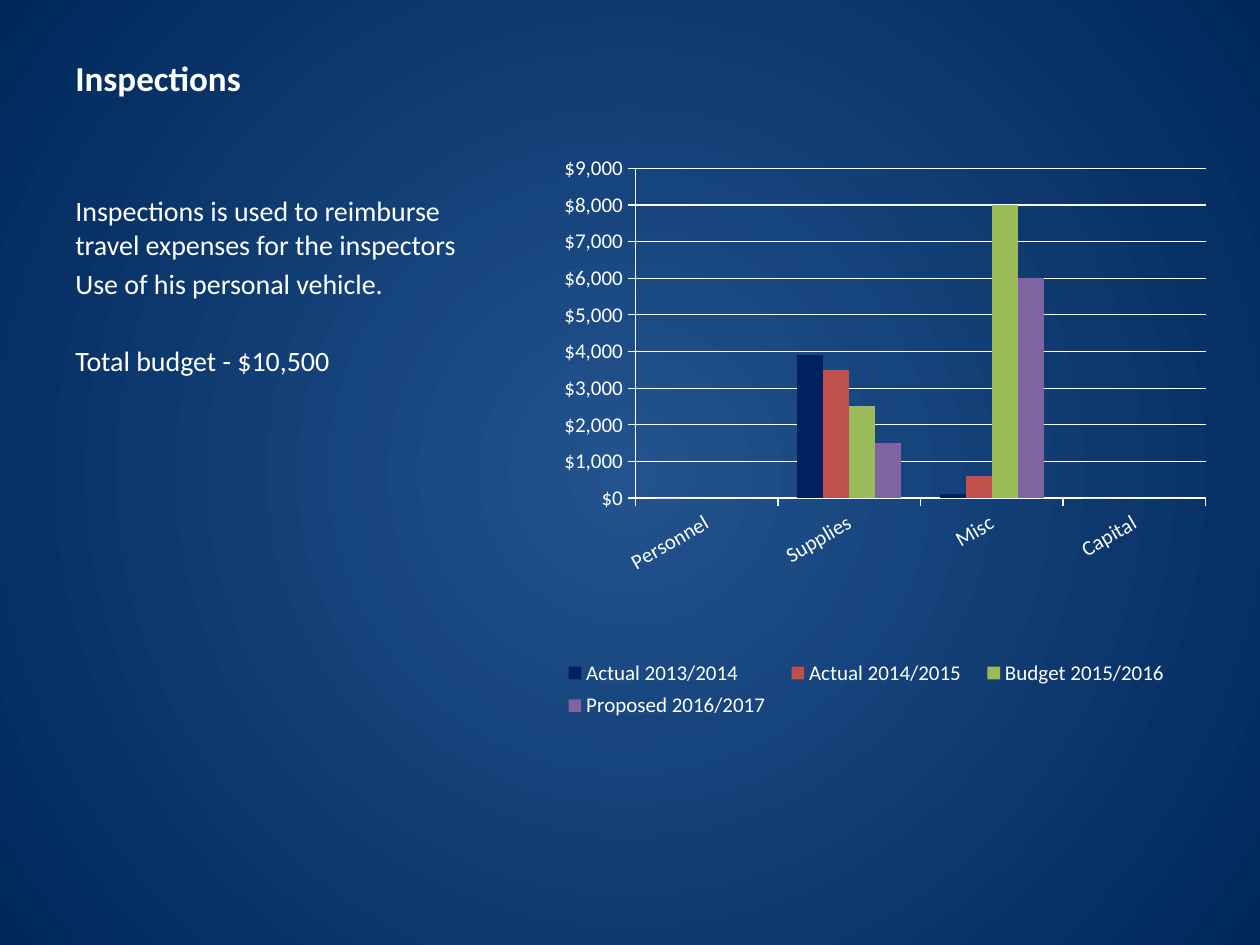
import pptx
import pptx.chart.data
import pptx.dml.color
import pptx.enum.chart
import pptx.enum.text
import pptx.oxml
import pptx.oxml.ns
import pptx.util

Pt = pptx.util.Pt
RGBColor = pptx.dml.color.RGBColor
qn = pptx.oxml.ns.qn

FONT = "Calibri"
WHITE = RGBColor(0xFF, 0xFF, 0xFF)
BG_CENTER = RGBColor(0x23, 0x53, 0x8E)
BG_EDGE = RGBColor(0x00, 0x28, 0x5B)
NAVY = RGBColor(0x00, 0x20, 0x60)
RED = RGBColor(0xC0, 0x50, 0x4D)
GREEN = RGBColor(0x9B, 0xBB, 0x59)
PURPLE = RGBColor(0x80, 0x64, 0xA2)

CATEGORIES = ["Personnel", "Supplies", "Misc", "Capital"]
SERIES = [
    ("Actual 2013/2014", (0, 3900, 100, 0), NAVY),
    ("Actual 2014/2015", (0, 3500, 600, 0), RED),
    ("Budget 2015/2016", (0, 2500, 8000, 0), GREEN),
    ("Proposed 2016/2017", (0, 1500, 6000, 0), PURPLE),
]


def set_background(s):
    """Radial gradient from the centre of the slide."""
    fill = s.background.fill
    fill.gradient()
    for stop, color, position in zip(fill.gradient_stops, (BG_CENTER, BG_EDGE), (0, 1)):
        stop.color.rgb = color
        stop.position = position
    lin = next(s.element.iter(qn("a:lin")))
    lin.getparent().replace(lin, pptx.oxml.parse_xml(
        f'<a:path {pptx.oxml.ns.nsdecls("a")} path="circle">'
        '<a:fillToRect l="50000" t="50000" r="50000" b="50000"/></a:path>'))


def set_font(font, size, bold=False):
    font.name = FONT
    font.size = Pt(size)
    font.bold = bold
    font.color.rgb = WHITE


def add_text(s, paragraphs, left, top, width, height, size=16, bold=False,
             anchor=pptx.enum.text.MSO_ANCHOR.TOP, margin_top=3.6):
    """Paragraphs are pairs of text and space before."""
    tf = s.shapes.add_textbox(Pt(left), Pt(top), Pt(width), Pt(height)).text_frame
    tf.word_wrap = True
    tf.vertical_anchor = anchor
    tf.margin_top = Pt(margin_top)
    for i, (text, space) in enumerate(paragraphs):
        p = tf.paragraphs[0] if i == 0 else tf.add_paragraph()
        p.space_before = Pt(space)
        r = p.add_run()
        r.text = text
        set_font(r.font, size, bold)


def set_layout(parent, index, x, y, w, h, inner=False):
    """Place a chart part by fractions of the chart's size."""
    for old in parent.findall(qn("c:layout")):
        parent.remove(old)
    target = '<c:layoutTarget val="inner"/>' if inner else ""
    parent.insert(index, pptx.oxml.parse_xml(
        f'<c:layout {pptx.oxml.ns.nsdecls("c")}><c:manualLayout>{target}'
        '<c:xMode val="edge"/><c:yMode val="edge"/>'
        f'<c:x val="{x}"/><c:y val="{y}"/><c:w val="{w}"/><c:h val="{h}"/>'
        '</c:manualLayout></c:layout>'))


def style_line(line):
    line.color.rgb = WHITE
    line.width = Pt(0.75)


def add_budget_chart(s, left, top, width, height):
    data = pptx.chart.data.CategoryChartData(number_format='"$"#,##0')
    data.categories = CATEGORIES
    for name, values, _ in SERIES:
        data.add_series(name, values)
    chart = s.shapes.add_chart(
        pptx.enum.chart.XL_CHART_TYPE.COLUMN_CLUSTERED,
        Pt(left), Pt(top), Pt(width), Pt(height), data).chart
    chart.has_title = False
    set_font(chart.font, 18)

    # Columns
    plot = chart.plots[0]
    plot.gap_width = 150
    plot.overlap = 0
    plot.vary_by_categories = False
    for series, (_, _, color) in zip(plot.series, SERIES):
        series.format.fill.solid()
        series.format.fill.fore_color.rgb = color

    # Axes
    for axis in (chart.category_axis, chart.value_axis):
        axis.major_tick_mark = pptx.enum.chart.XL_TICK_MARK.OUTSIDE
        set_font(axis.tick_labels.font, 12)
        style_line(axis.format.line)
    value_axis = chart.value_axis
    value_axis.minimum_scale = 0
    value_axis.maximum_scale = 9000
    value_axis.major_unit = 1000
    value_axis.tick_labels.number_format = '"$"#,##0'
    value_axis.tick_labels.number_format_is_linked = False
    style_line(value_axis.major_gridlines.format.line)
    cat_axis = next(chart.element.iter(qn("c:catAx"))) if hasattr(chart, "element") \
        else next(chart._chartSpace.iter(qn("c:catAx")))
    next(cat_axis.iter(qn("a:bodyPr"))).set("rot", "-1800000")

    # Legend and placement
    chart.has_legend = True
    chart.legend.position = pptx.enum.chart.XL_LEGEND_POSITION.BOTTOM
    chart.legend.include_in_layout = False
    set_font(chart.legend.font, 12)
    plot_area = next(chart._chartSpace.iter(qn("c:plotArea")))
    legend = next(chart._chartSpace.iter(qn("c:legend")))
    set_layout(plot_area, 0, 0.172, 0.079, 0.81, 0.409, inner=True)
    set_layout(legend, 1, 0.05, 0.68, 0.9, 0.09)


def main():
    prs = pptx.Presentation()
    prs.slide_width, prs.slide_height = Pt(720), Pt(540)
    s = prs.slides.add_slide(prs.slide_layouts[6])
    set_background(s)

    # Title
    add_text(s, [("Inspections", 0)], 36, 21.6, 237, 38, size=20, bold=True,
             anchor=pptx.enum.text.MSO_ANCHOR.BOTTOM)

    # Description
    add_text(s, [
        ("Inspections is used to reimburse travel expenses for the inspectors", 0),
        ("Use of his personal vehicle.", 3),
        ("Total budget - $10,500", 25),
    ], 36, 84.2, 237, 398, margin_top=26.6)

    # Budget by category
    add_budget_chart(s, 293.8, 59.8, 402.5, 460.8)
    prs.save("out.pptx")


if __name__ == "__main__":
    main()
